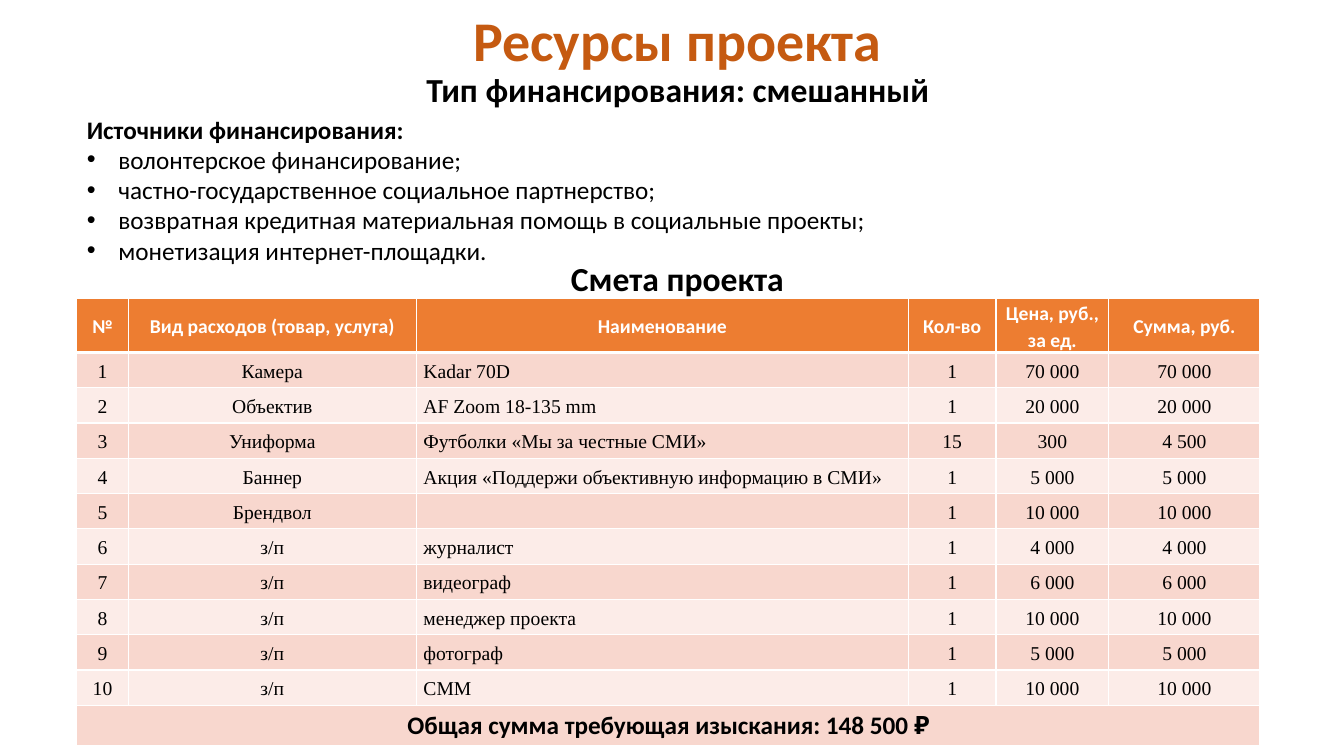
import pptx
import pptx.dml.color
import pptx.enum.text
import pptx.oxml
import pptx.oxml.ns
import pptx.util
from lxml import etree

Pt = pptx.util.Pt
ALIGN = pptx.enum.text.PP_ALIGN
ANCHOR = pptx.enum.text.MSO_ANCHOR
COLORS = {"title": "C55A11", "text": "000000", "white": "FFFFFF",
          "header": "ED7D31", "odd": "F8D7CE", "even": "FCECE8"}

COLUMN_WIDTHS = [36.7, 205.9, 351.4, 62.6, 80.6, 108]
HEADER_HEIGHT, ROW_HEIGHT, TOTAL_HEIGHT = 36.7, 25.2, 28.1
HEADERS = ["№", "Вид расходов (товар, услуга)", "Наименование", "Кол-во",
           "Цена, руб.,\nза ед.", "Сумма, руб."]
EXPENSES = [  # kind, name, quantity, unit price
    ("Камера", "Kadar 70D", 1, 70000),
    ("Объектив", "AF Zoom 18-135 mm", 1, 20000),
    ("Униформа", "Футболки «Мы за честные СМИ»", 15, 300),
    ("Баннер", "Акция «Поддержи объективную информацию в СМИ»", 1, 5000),
    ("Брендвол", "", 1, 10000),
    ("з/п", "журналист", 1, 4000),
    ("з/п", "видеограф", 1, 6000),
    ("з/п", "менеджер проекта", 1, 10000),
    ("з/п", "фотограф", 1, 5000),
    ("з/п", "СММ", 1, 10000),
]
TOTAL = "Общая сумма требующая изыскания: 148 500 ₽"
SOURCES = ["Источники финансирования:",
           "волонтерское финансирование;",
           "частно-государственное социальное партнерство;",
           "возвратная кредитная материальная помощь в социальные проекты;",
           "монетизация интернет-площадки."]


def spaced(number):
    """Group thousands with a space."""
    return f"{number:,}".replace(",", " ")


class Page:
    def __init__(self, deck):
        self.slide = deck.slides.add_slide(deck.slide_layouts[6])

    def style(self, para, size, color="text", bold=False, font="Calibri"):
        for span in para.runs:
            span.font.size = Pt(size)
            span.font.name = font
            span.font.bold = bold
            span.font.color.rgb = pptx.dml.color.RGBColor.from_string(COLORS[color])

    def box(self, left, top, width, height, text, wrap=False):
        frame = self.slide.shapes.add_textbox(
            Pt(left), Pt(top), Pt(width), Pt(height)).text_frame
        frame.word_wrap = wrap
        frame.auto_size = pptx.enum.text.MSO_AUTO_SIZE.SHAPE_TO_FIT_TEXT
        frame.text = text
        return frame

    def heading(self, left, top, width, height, text, size, color="text"):
        para = self.box(left, top, width, height, text).paragraphs[0]
        para.alignment = ALIGN.CENTER
        self.style(para, size, color, bold=True)

    def bullet_list(self, left, top, width, height, lines):
        """The first line is a bold lead-in, the others are bulleted."""
        frame = self.box(left, top, width, height, "\n".join(lines), wrap=True)
        lead, *items = frame.paragraphs
        self.style(lead, 18, bold=True)
        for para in items:
            props = para._p.get_or_add_pPr()
            props.set("marL", str(Pt(22.5)))
            props.set("indent", str(-Pt(22.5)))
            for tag, name, value in (("buFont", "typeface", "Arial"),
                                     ("buChar", "char", "•")):
                etree.SubElement(props, pptx.oxml.ns.qn("a:" + tag)).set(name, value)
            self.style(para, 18)

    def paint(self, cell, fill, top=1, bottom=1):
        """White borders, then the fill; widths of top and bottom borders vary."""
        props = cell._tc.get_or_add_tcPr()
        for side, width in (("L", 1), ("R", 1), ("T", top), ("B", bottom)):
            props.append(pptx.oxml.parse_xml(
                f'<a:ln{side} {pptx.oxml.ns.nsdecls("a")} w="{Pt(width)}"><a:solidFill>'
                f'<a:srgbClr val="{COLORS["white"]}"/></a:solidFill></a:ln{side}>'))
        cell.fill.solid()
        cell.fill.fore_color.rgb = pptx.dml.color.RGBColor.from_string(COLORS[fill])

    def fill_cell(self, cell, text, align, **look):
        cell.vertical_anchor = ANCHOR.MIDDLE
        cell.margin_left = cell.margin_right = Pt(5)
        cell.margin_top = cell.margin_bottom = 0
        if not text:
            return
        cell.text_frame.text = text
        for para in cell.text_frame.paragraphs:
            para.alignment = align
            para.line_spacing = 1.15
            self.style(para, 14, **look)

    def budget(self, left, top):
        heights = [HEADER_HEIGHT] + [ROW_HEIGHT] * len(EXPENSES) + [TOTAL_HEIGHT]
        table = self.slide.shapes.add_table(
            len(heights), len(COLUMN_WIDTHS), Pt(left), Pt(top),
            Pt(sum(COLUMN_WIDTHS)), Pt(sum(heights))).table
        table.first_row = table.horz_banding = False
        for column, width in zip(table.columns, COLUMN_WIDTHS):
            column.width = Pt(width)
        for index, (row, height) in enumerate(zip(table.rows, heights)):
            row.height = Pt(height)
            fill = ("odd" if index % 2 else "even") if index else "header"
            for cell in row.cells:
                self.paint(cell, fill, top=3 if index == 1 else 1,
                           bottom=1 if index else 3)

        for column, text in enumerate(HEADERS):
            self.fill_cell(table.cell(0, column), text, ALIGN.CENTER,
                           color="white", bold=True)
        for index, (kind, name, count, price) in enumerate(EXPENSES, 1):
            values = [str(index), kind, name, str(count),
                      spaced(price), spaced(count * price)]
            for column, text in enumerate(values):
                self.fill_cell(table.cell(index, column), text,
                               ALIGN.LEFT if column == 2 else ALIGN.CENTER,
                               font="Times New Roman")

        last = len(heights) - 1
        total = table.cell(last, 0)
        total.merge(table.cell(last, len(COLUMN_WIDTHS) - 1))
        total.text_frame.text = TOTAL
        para = total.text_frame.paragraphs[0]
        para.alignment = ALIGN.CENTER
        self.style(para, 18, bold=True)


def main():
    deck = pptx.Presentation()
    deck.slide_width, deck.slide_height = Pt(960), Pt(540)
    page = Page(deck)
    page.heading(329, 0.7, 309.6, 55.4, "Ресурсы проекта", 40, "title")
    page.heading(295.2, 45.4, 378, 36, "Тип финансирования: смешанный", 24)
    page.heading(399.6, 180.7, 168.5, 36, "Смета проекта", 24)
    page.budget(54.9, 213.1)
    page.bullet_list(54.9, 77.8, 845.2, 116.6, SOURCES)
    deck.save("out.pptx")


if __name__ == "__main__":
    main()
